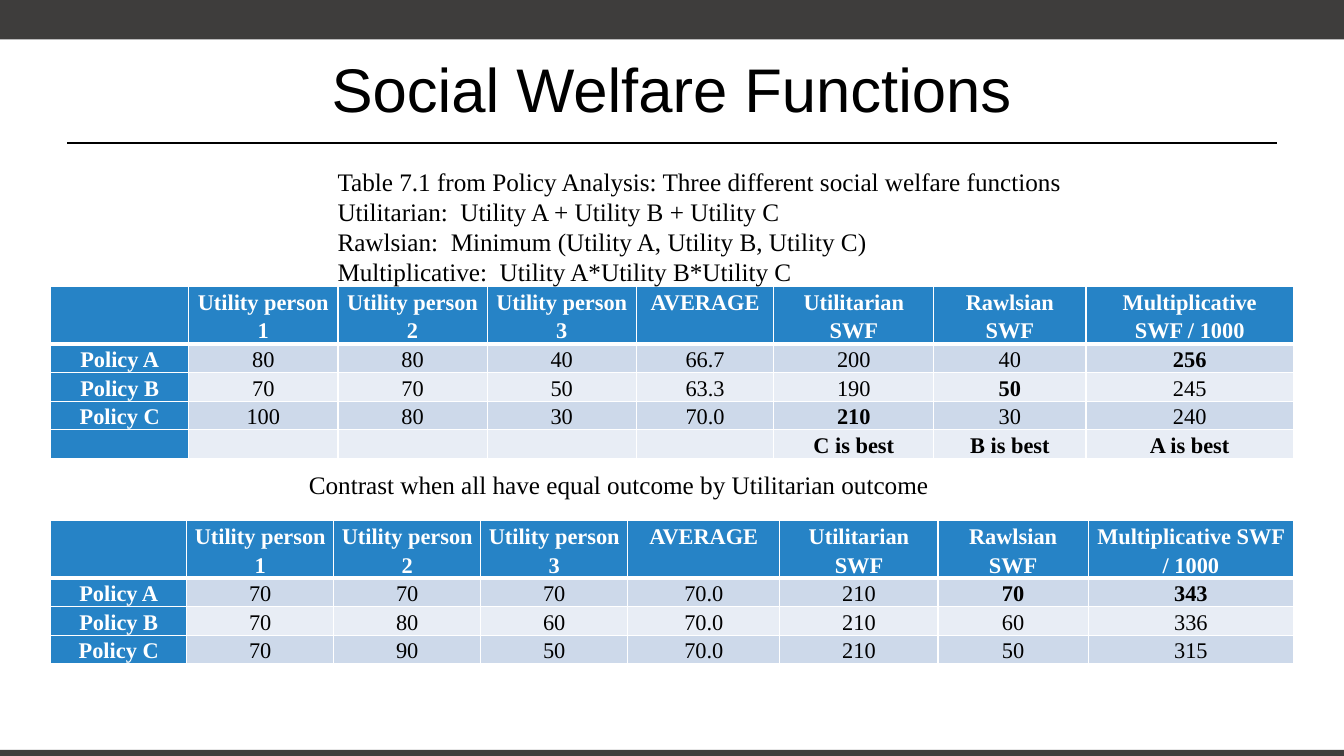
import pptx
import pptx.dml.color
import pptx.enum.shapes
import pptx.enum.text
import pptx.oxml
import pptx.oxml.ns
import pptx.util
from pptx.util import Pt

ALIGN = pptx.enum.text.PP_ALIGN
ANCHOR = pptx.enum.text.MSO_ANCHOR
SERIF = "Times New Roman"
BLUE, PALE, PALER = "2683C6", "CDD9EA", "E8EDF5"
WHITE, BLACK, CHARCOAL = "FFFFFF", "000000", "3E3D3C"
SLIDE_WIDTH, SLIDE_HEIGHT = 960, 540
HEADER_HEIGHT, ROW_HEIGHT = 40.4, 20.4
CELL_SIZE, CELL_MARGIN = 16, 4.94

HEADERS = ["", "Utility person 1", "Utility person 2", "Utility person 3", "AVERAGE",
           "Utilitarian SWF", "Rawlsian SWF", "Multiplicative SWF / 1000"]

# "best" holds the (row, column) cells in bold; "last_margin" is the side margin of the last header.
TABLES = [
    {"top": 204.7, "last_margin": 12,
     "widths": [98.6, 106.6, 106.6, 106.6, 98.2, 114.3, 108.7, 148.2],
     "rows": [["Policy A", "80", "80", "40", "66.7", "200", "40", "256"],
              ["Policy B", "70", "70", "50", "63.3", "190", "50", "245"],
              ["Policy C", "100", "80", "30", "70.0", "210", "30", "240"],
              ["", "", "", "", "", "C is best", "B is best", "A is best"]],
     "best": {(1, 7), (2, 6), (3, 5), (4, 5), (4, 6), (4, 7)}},
    {"top": 371.9, "last_margin": CELL_MARGIN,
     "widths": [97.2, 105, 105, 105, 108.7, 113, 107.3, 146.6],
     "rows": [["Policy A", "70", "70", "70", "70.0", "210", "70", "343"],
              ["Policy B", "70", "80", "60", "70.0", "210", "60", "336"],
              ["Policy C", "70", "90", "50", "70.0", "210", "50", "315"]],
     "best": {(1, 6), (1, 7)}},
]

TEXTS = [
    {"box": (48, 18, 864, 90), "lines": ["Social Welfare Functions"], "size": 44,
     "font": "Arial", "align": ALIGN.CENTER, "anchor": ANCHOR.MIDDLE, "wrap": True},
    {"box": (234, 114.5, 725.8, 94.3), "size": 18, "font": SERIF,
     "align": ALIGN.LEFT, "anchor": ANCHOR.MIDDLE, "wrap": True,
     "lines": ["Table 7.1 from Policy Analysis: Three different social welfare functions",
               "Utilitarian:  Utility A + Utility B + Utility C",
               "Rawlsian:  Minimum (Utility A, Utility B, Utility C)",
               "Multiplicative:  Utility A*Utility B*Utility C"]},
    {"box": (213.5, 332, 461.5, 29), "size": 18, "font": SERIF,
     "align": ALIGN.LEFT, "anchor": ANCHOR.TOP, "wrap": False,
     "lines": ["Contrast when all have equal outcome by Utilitarian outcome"]},
]

BARS = [(0, 0, SLIDE_WIDTH, 28.1), (0, 535.7, SLIDE_WIDTH, 4.3)]
RULE = (48, 102.2, 912, 102.2)


def rgb(value):
    return pptx.dml.color.RGBColor.from_string(value)


def set_format(target, values):
    for name, value in values.items():
        setattr(target, name, value)


def points(values):
    return [Pt(value) for value in values]


def write(paragraph, text, font, size, color, bold=False):
    run = paragraph.add_run()
    run.text = text
    set_format(run.font, {"name": font, "size": Pt(size), "bold": bold})
    run.font.color.rgb = rgb(color)


def add_bar(slide, box):
    shape = slide.shapes.add_shape(pptx.enum.shapes.MSO_SHAPE.RECTANGLE, *points(box))
    shape.shadow.inherit = False
    shape.fill.solid()
    shape.fill.fore_color.rgb = rgb(CHARCOAL)
    shape.line.fill.background()


def add_rule(slide):
    line = slide.shapes.add_connector(pptx.enum.shapes.MSO_CONNECTOR.STRAIGHT, *points(RULE))
    line.line.color.rgb = rgb(BLACK)
    line.line.width = Pt(1.25)
    line._element.spPr.append(pptx.oxml.parse_xml(f"<a:effectLst {pptx.oxml.ns.nsdecls('a')}/>"))


def add_text(slide, item):
    frame = slide.shapes.add_textbox(*points(item["box"])).text_frame
    set_format(frame, {"word_wrap": item["wrap"], "vertical_anchor": item["anchor"]})
    for index, line in enumerate(item["lines"]):
        paragraph = frame.add_paragraph() if index else frame.paragraphs[0]
        paragraph.alignment = item["align"]
        write(paragraph, line, item["font"], item["size"], BLACK)


def set_borders(cell, top, bottom):
    """Draw white borders of 1 pt at the sides and the given widths above and below."""
    properties = cell._tc.get_or_add_tcPr()
    for index, (side, width) in enumerate({"L": 1, "R": 1, "T": top, "B": bottom}.items()):
        properties.insert(index, pptx.oxml.parse_xml(
            f'<a:ln{side} {pptx.oxml.ns.nsdecls("a")} w="{Pt(width)}"><a:solidFill>'
            f'<a:srgbClr val="{WHITE}"/></a:solidFill></a:ln{side}>'))


def fill_cell(cell, text, row, column, bold, margin):
    heading = row == 0 or column == 0
    set_format(cell, {"margin_left": Pt(margin), "margin_right": Pt(margin),
                      "margin_top": 0, "margin_bottom": 0})
    cell.fill.solid()
    cell.fill.fore_color.rgb = rgb(BLUE if heading else PALE if row % 2 else PALER)
    set_borders(cell, 3 if row == 1 else 1, 3 if row == 0 else 1)
    paragraph = cell.text_frame.paragraphs[0]
    set_format(paragraph, {"alignment": ALIGN.CENTER, "line_spacing": 1.15})
    if text:
        write(paragraph, text, SERIF, CELL_SIZE, WHITE if heading else BLACK, heading or bold)
    else:
        paragraph._p.append(pptx.oxml.parse_xml(
            f'<a:endParaRPr {pptx.oxml.ns.nsdecls("a")} sz="{CELL_SIZE * 100}"/>'))


def add_policy_table(slide, item):
    rows = [HEADERS] + item["rows"]
    heights = [HEADER_HEIGHT] + [ROW_HEIGHT] * len(item["rows"])
    box = points((36.2, item["top"], sum(item["widths"]), sum(heights)))
    table = slide.shapes.add_table(len(rows), len(HEADERS), *box).table
    for column, width in zip(table.columns, item["widths"]):
        column.width = Pt(width)
    for row, (values, height) in enumerate(zip(rows, heights)):
        table.rows[row].height = Pt(height)
        for column, text in enumerate(values):
            last_header = row == 0 and column == len(HEADERS) - 1
            fill_cell(table.cell(row, column), text, row, column, (row, column) in item["best"],
                      item["last_margin"] if last_header else CELL_MARGIN)


def main():
    presentation = pptx.Presentation()
    set_format(presentation, {"slide_width": Pt(SLIDE_WIDTH), "slide_height": Pt(SLIDE_HEIGHT)})
    slide = presentation.slides.add_slide(presentation.slide_layouts[6])
    for box in BARS:
        add_bar(slide, box)
    add_rule(slide)
    for item in TABLES:
        add_policy_table(slide, item)
    for item in TEXTS:
        add_text(slide, item)
    presentation.save("out.pptx")


if __name__ == "__main__":
    main()
